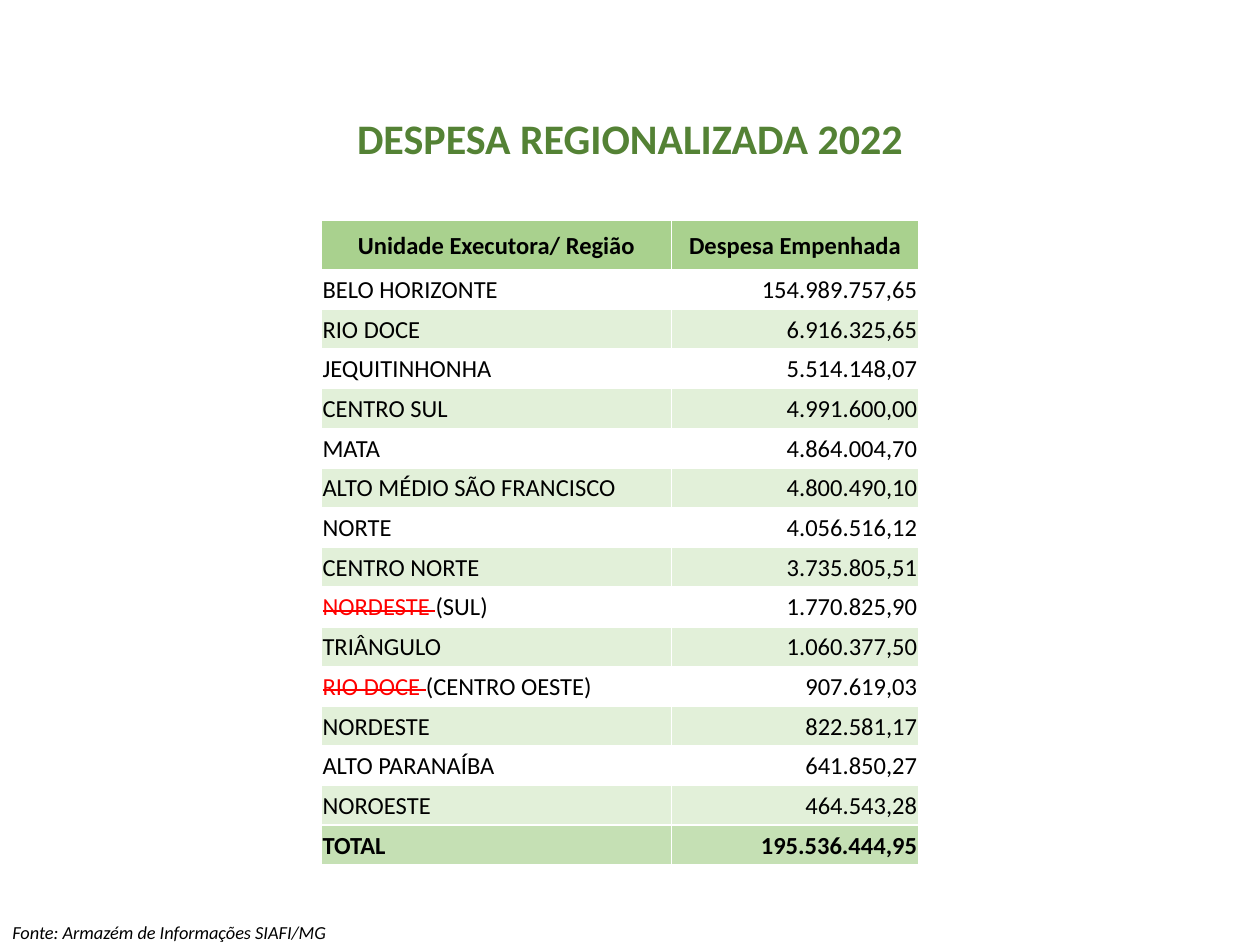
from dataclasses import dataclass

from lxml import etree
from pptx import Presentation
from pptx.dml.color import RGBColor
from pptx.enum.text import MSO_ANCHOR, PP_ALIGN
from pptx.oxml.ns import qn
from pptx.slide import Slide
from pptx.table import _Cell
from pptx.text.text import TextFrame
from pptx.util import Inches, Pt

LEFT, CENTER, RIGHT = PP_ALIGN.LEFT, PP_ALIGN.CENTER, PP_ALIGN.RIGHT
MIDDLE = MSO_ANCHOR.MIDDLE


@dataclass(frozen=True)
class Theme:
    font: str = "Calibri"
    title_size: float = 24
    table_size: float = 14
    source_size: float = 10.5
    title: str = "548235"
    text: str = "000000"
    struck: str = "FF0000"
    header: str = "A9D18E"
    total: str = "C5E0B4"
    bands: tuple[str, str] = ("FFFFFF", "E2F0D9")
    border: str = "FFFFFF"


@dataclass(frozen=True)
class Expense:
    region: str
    amount: str
    struck: str = ""


THEME = Theme()
HEADER = Expense("Unidade Executora/ Região", "Despesa Empenhada")
EXPENSES = [
    Expense("BELO HORIZONTE", "154.989.757,65"),
    Expense("RIO DOCE", "6.916.325,65"),
    Expense("JEQUITINHONHA", "5.514.148,07"),
    Expense("CENTRO SUL", "4.991.600,00"),
    Expense("MATA", "4.864.004,70"),
    Expense("ALTO MÉDIO SÃO FRANCISCO", "4.800.490,10"),
    Expense("NORTE", "4.056.516,12"),
    Expense("CENTRO NORTE", "3.735.805,51"),
    Expense("(SUL)", "1.770.825,90", struck="NORDESTE "),
    Expense("TRIÂNGULO", "1.060.377,50"),
    Expense("(CENTRO OESTE)", "907.619,03", struck="RIO DOCE "),
    Expense("NORDESTE", "822.581,17"),
    Expense("ALTO PARANAÍBA", "641.850,27"),
    Expense("NOROESTE", "464.543,28"),
]
TOTAL = Expense("TOTAL", "195.536.444,95")


def add_text(tf: TextFrame, text: str, *, size: float, color: str = THEME.text,
             align: PP_ALIGN = LEFT, bold: bool = False, italic: bool = False,
             strike: bool = False) -> None:
    """Append a formatted run to the first paragraph of the frame."""
    p = tf.paragraphs[0]
    p.alignment = align
    r = p.add_run()
    r.text = text
    r.font.name, r.font.size = THEME.font, Pt(size)
    r.font.bold, r.font.italic = bold, italic
    r.font.color.rgb = RGBColor.from_string(color)
    if strike:
        r.font._element.set("strike", "sngStrike")


def set_borders(cell: _Cell) -> None:
    tcPr = cell._tc.get_or_add_tcPr()
    for side in ("a:lnL", "a:lnR", "a:lnT", "a:lnB"):
        ln = etree.SubElement(tcPr, qn(side), w=str(Pt(1)))
        fill = etree.SubElement(ln, qn("a:solidFill"))
        etree.SubElement(fill, qn("a:srgbClr"), val=THEME.border)


def format_cell(cell: _Cell, fill: str) -> None:
    cell.margin_left = cell.margin_right = cell.margin_top = Inches(0.01)
    cell.margin_bottom = 0
    cell.vertical_anchor = MIDDLE
    set_borders(cell)
    cell.fill.solid()
    cell.fill.fore_color.rgb = RGBColor.from_string(fill)


def add_title(s: Slide) -> None:
    sp = s.shapes.title
    sp.left, sp.top = Inches(0.5), Inches(0.72)
    sp.width, sp.height = Inches(9), Inches(0.79)
    tf = sp.text_frame
    tf.vertical_anchor = MIDDLE
    tf.paragraphs[0].line_spacing = 0.9
    add_text(tf, "DESPESA REGIONALIZADA 2022", size=THEME.title_size,
             color=THEME.title, align=CENTER, bold=True)


def add_expense_table(s: Slide) -> None:
    rows = [HEADER, *EXPENSES, TOTAL]
    fills = [THEME.header, *(THEME.bands[i % 2] for i in range(len(EXPENSES))),
             THEME.total]
    height, header_height = Inches(5.12), Inches(0.39)
    table = s.shapes.add_table(len(rows), 2, Inches(2.55), Inches(1.75),
                               Inches(4.74), height).table
    table.columns[0].width, table.columns[1].width = Inches(2.78), Inches(1.96)
    row_height = (height - header_height) // (len(rows) - 1)

    for i, (row, fill) in enumerate(zip(rows, fills)):
        is_header = row is HEADER
        table.rows[i].height = header_height if is_header else row_height
        bold = is_header or row is TOTAL
        region, amount = table.cell(i, 0), table.cell(i, 1)
        for cell in (region, amount):
            format_cell(cell, fill)
        if row.struck:
            add_text(region.text_frame, row.struck, size=THEME.table_size,
                     color=THEME.struck, strike=True)
        add_text(region.text_frame, row.region, size=THEME.table_size,
                 align=CENTER if is_header else LEFT, bold=bold)
        add_text(amount.text_frame, row.amount, size=THEME.table_size,
                 align=CENTER if is_header else RIGHT, bold=bold)


def add_source(s: Slide) -> None:
    tf = s.shapes.add_textbox(0, Inches(7.3), Inches(7.95), Inches(0.2)).text_frame
    tf.word_wrap = True
    tf.vertical_anchor = MIDDLE
    add_text(tf, "Fonte: Armazém de Informações SIAFI/MG",
             size=THEME.source_size, italic=True)


def main() -> None:
    prs = Presentation()
    prs.slide_width, prs.slide_height = Inches(10), Inches(7.5)
    s = prs.slides.add_slide(prs.slide_layouts[5])
    add_expense_table(s)
    add_title(s)
    add_source(s)
    prs.save("out.pptx")


if __name__ == "__main__":
    main()
